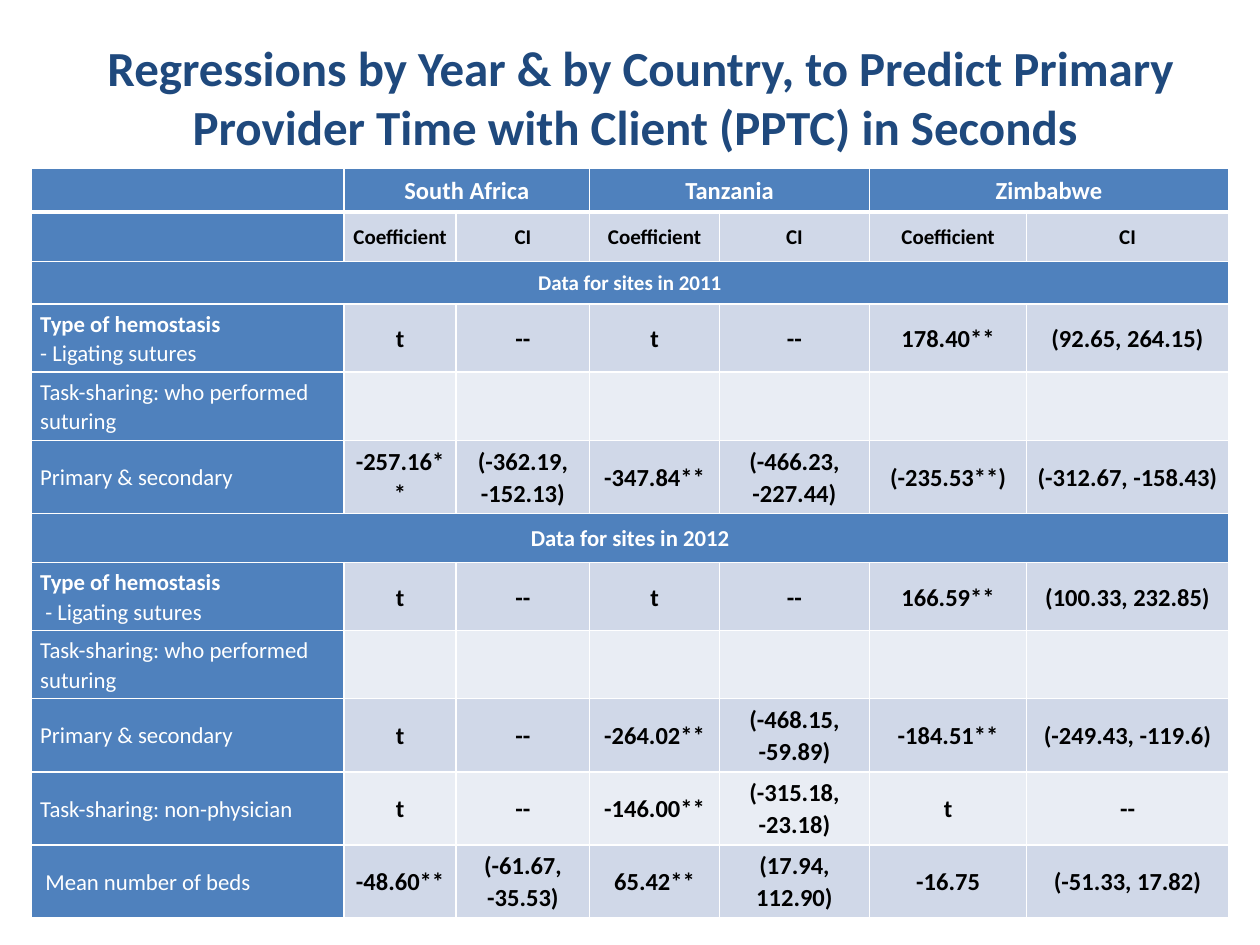
from dataclasses import dataclass
from lxml.etree import SubElement
from pptx import Presentation
from pptx.dml.color import RGBColor as RGB
from pptx.enum.text import MSO_ANCHOR as ANCHOR, MSO_AUTO_SIZE as AUTO, PP_ALIGN as ALIGN
from pptx.oxml.ns import qn
from pptx.util import Pt


@dataclass(frozen=True)
class Theme:
    """Colours, font and type sizes of the slide."""
    font: str = "Calibri"
    navy: str = "1F497D"
    blue: str = "4F81BD"
    band: str = "D0D8E8"
    pale: str = "E9EDF4"
    white: str = "FFFFFF"
    black: str = "000000"
    title: int = 28
    value: int = 14
    label: int = 13
    small: int = 12


T = Theme()
TITLE = "Regressions by Year & by Country, to Predict Primary Provider Time with Client (PPTC) in Seconds "
COUNTRIES = ["South Africa", "Tanzania", "Zimbabwe"]
COL_WIDTHS = [178.6, 64.1, 76.3, 74.2, 85.7, 89.9, 115.2]
ROW_HEIGHTS = [25.2, 28.1, 24.5, 38.9, 38.9, 41.8, 28.1, 38.9, 38.9, 41.8, 41.8, 41.8]
SUTURING = "Task-sharing: who performed suturing"
SECTIONS = {2: ("Data for sites in 2011", T.small), 6: ("Data for sites in 2012", T.label)}
RESULTS = {
    3: ["Type of hemostasis\n- Ligating sutures", "t", "--", "t", "--", "178.40**", "(92.65, 264.15)"],
    4: [SUTURING],
    5: ["Primary & secondary", "-257.16**", "(-362.19, -152.13)", "-347.84**", "(-466.23, -227.44)",
        "(-235.53**)", "(-312.67, -158.43)"],
    7: ["Type of hemostasis\n - Ligating sutures", "t", "--", "t", "--", "166.59**", "(100.33, 232.85)"],
    8: [SUTURING],
    9: ["Primary & secondary", "t", "--", "-264.02**", "(-468.15, -59.89)", "-184.51**", "(-249.43, -119.6)"],
    10: ["Task-sharing: non-physician", "t", "--", "-146.00**", "(-315.18, -23.18)", "t", "--"],
    11: [" Mean number of beds", "-48.60**", "(-61.67, -35.53)", "65.42**", "(17.94, 112.90)",
         "-16.75", "(-51.33, 17.82)"],
}


def format_paragraph(p, size, color, bold=True, align=ALIGN.CENTER):
    """Align a paragraph and style its runs."""
    p.alignment = align
    for r in p.runs:
        r.font.name, r.font.size, r.font.bold = T.font, Pt(size), bold
        r.font.color.rgb = RGB.from_string(color)


def add_title(s):
    """Add the slide title."""
    tf = s.shapes.add_textbox(Pt(54), Pt(18), Pt(624), Pt(75)).text_frame
    tf.word_wrap = True
    tf.auto_size = AUTO.SHAPE_TO_FIT_TEXT
    tf.text = TITLE
    format_paragraph(tf.paragraphs[0], T.title, T.navy)


def style_cell(cell, fill, bottom=1):
    """Give a cell its borders, insets and fill."""
    tcPr = cell._tc.get_or_add_tcPr()
    for side, width in (("L", 1), ("R", 1), ("T", 1), ("B", bottom)):
        ln = SubElement(tcPr, qn(f"a:ln{side}"), w=str(Pt(width)))
        SubElement(SubElement(ln, qn("a:solidFill")), qn("a:srgbClr"), val=T.white)
    cell.margin_left = cell.margin_right = Pt(5)
    cell.margin_top = cell.margin_bottom = 0
    cell.vertical_anchor = ANCHOR.MIDDLE
    cell.fill.solid()
    cell.fill.fore_color.rgb = RGB.from_string(fill)


def write_cell(cell, text, size, color, align=ALIGN.CENTER):
    """Write centred bold text, or a label whose last line is regular."""
    tf = cell.text_frame
    tf.text = text
    for p in tf.paragraphs:
        bold = align == ALIGN.CENTER or p is not tf.paragraphs[-1] and p.text != tf.paragraphs[-1].text
        format_paragraph(p, size, color, bold, align)
        p.line_spacing = 1.07


def add_grid(s):
    """Add the empty styled table."""
    shape = s.shapes.add_table(len(ROW_HEIGHTS), len(COL_WIDTHS), Pt(18), Pt(96),
                               Pt(sum(COL_WIDTHS)), Pt(sum(ROW_HEIGHTS)))
    table = shape.table
    for column, width in zip(table.columns, COL_WIDTHS):
        column.width = Pt(width)
    for i, (row, height) in enumerate(zip(table.rows, ROW_HEIGHTS)):
        row.height = Pt(height)
        for j, cell in enumerate(row.cells):
            header = i == 0 or j == 0 or i in SECTIONS
            style_cell(cell, T.blue if header else (T.band if i % 2 or i == 1 else T.pale),
                       bottom=1 if i else 3)
    return table


def fill_headers(table):
    """Write the country, column and section headings."""
    for j, country in zip(range(1, len(COL_WIDTHS), 2), COUNTRIES):
        table.cell(0, j).merge(table.cell(0, j + 1))
        write_cell(table.cell(0, j), country, T.value, T.white)
        write_cell(table.cell(1, j), "Coefficient", T.small, T.black)
        write_cell(table.cell(1, j + 1), "CI", T.small, T.black)
    for i, (text, size) in SECTIONS.items():
        table.cell(i, 0).merge(table.cell(i, len(COL_WIDTHS) - 1))
        write_cell(table.cell(i, 0), text, size, T.white)


def fill_results(table):
    """Write the row labels and regression results."""
    for i, (label, *values) in RESULTS.items():
        write_cell(table.cell(i, 0), label, T.label, T.white, ALIGN.LEFT)
        for j, value in enumerate(values, 1):
            write_cell(table.cell(i, j), value, T.value, T.black)


def main():
    """Build and save the slide."""
    prs = Presentation()
    prs.slide_width, prs.slide_height = Pt(720), Pt(540)
    s = prs.slides.add_slide(prs.slide_layouts[6])
    add_title(s)
    table = add_grid(s)
    fill_headers(table)
    fill_results(table)
    prs.save("out.pptx")


if __name__ == "__main__":
    main()
